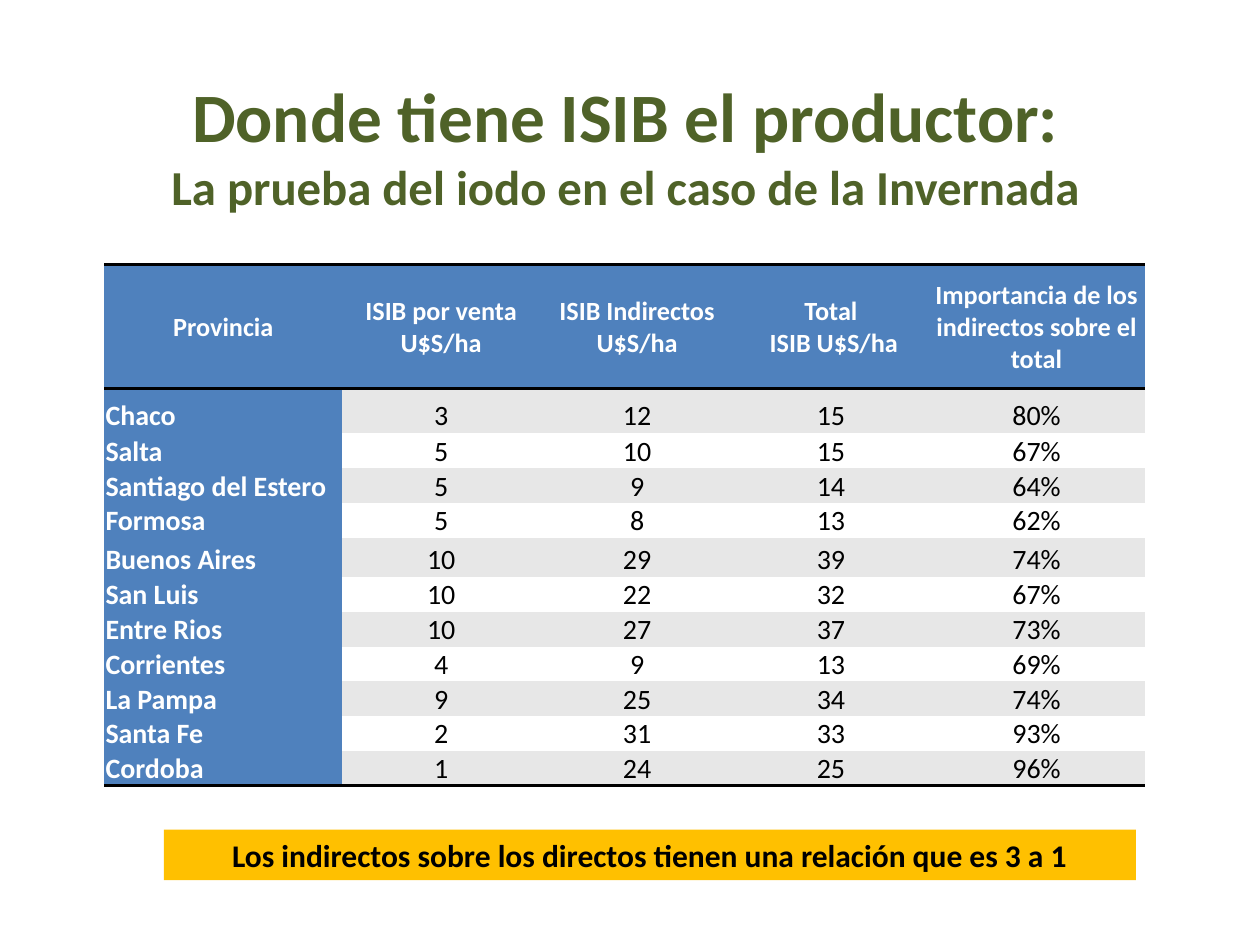
import pptx
import pptx.util
import pptx.dml.color
import pptx.enum.shapes
import pptx.enum.text
import pptx.oxml
import pptx.oxml.ns
from lxml import etree

Pt = pptx.util.Pt
ALIGN = pptx.enum.text.PP_ALIGN
ANCHOR = pptx.enum.text.MSO_ANCHOR

TITLE = "Donde tiene ISIB el productor:\vLa prueba del iodo en el caso de la Invernada"
HEADINGS = (
    "Provincia",
    "ISIB por venta U$S/ha",
    "ISIB Indirectos U$S/ha",
    "Total\n ISIB U$S/ha",
    "Importancia de los indirectos sobre el total",
)
PROVINCES = [
    ("Chaco", 3, 12, 15, "80%"),
    ("Salta", 5, 10, 15, "67%"),
    ("Santiago del Estero", 5, 9, 14, "64%"),
    ("Formosa", 5, 8, 13, "62%"),
    ("Buenos Aires", 10, 29, 39, "74%"),
    ("San Luis", 10, 22, 32, "67%"),
    ("Entre Rios", 10, 27, 37, "73%"),
    ("Corrientes", 4, 9, 13, "69%"),
    ("La Pampa", 9, 25, 34, "74%"),
    ("Santa Fe", 2, 31, 33, "93%"),
    ("Cordoba", 1, 24, 25, "96%"),
]
CONCLUSION = "Los indirectos sobre los directos tienen una relación que es 3 a 1"

THEME = {
    "font": "Calibri",
    "green": "4F6228", "blue": "4F81BD", "grey": "E7E7E7",
    "white": "FFFFFF", "black": "000000", "amber": "FFC000",
    "title": 39.6, "subtitle": 27.9, "heading": 15, "body": 16, "conclusion": 18,
    "rule": 2,
}
COLUMN_WIDTHS = (136, 113, 111, 110.5, 124.5)
HEADING_HEIGHT, ROW_HEIGHT = 71, 18
TALLER_ROWS = {"Chaco": 25.5, "Buenos Aires": 22.3}
NO_STYLE = "{2D5ABB26-0587-4C30-8999-92F81FD0307C}"


def rgb(name):
    """Return a theme colour as an RGBColor."""
    return pptx.dml.color.RGBColor.from_string(THEME[name])


def paint(part, colour):
    """Fill a shape or cell with a solid theme colour."""
    part.fill.solid()
    part.fill.fore_color.rgb = rgb(colour)


def write(frame, text, sizes, colour, bold=True, align=ALIGN.CENTER, anchor=ANCHOR.MIDDLE):
    """Write paragraphs split at newlines, with one size for each line between breaks."""
    frame.word_wrap = True
    frame.vertical_anchor = anchor
    for number, content in enumerate(text.split("\n")):
        paragraph = frame.add_paragraph() if number else frame.paragraphs[0]
        paragraph.alignment = align
        for position, (line, size) in enumerate(zip(content.split("\v"), sizes)):
            if position:
                paragraph.add_line_break()
            run = paragraph.add_run()
            run.text = line
            run.font.name = THEME["font"]
            run.font.size = Pt(THEME[size])
            run.font.bold = bold
            run.font.color.rgb = rgb(colour)


def rule_cell(cell, sides):
    """Draw black rules on the given sides of a cell."""
    properties = cell._tc.get_or_add_tcPr()
    for index, side in enumerate(sides):
        line = etree.Element(pptx.oxml.ns.qn(f"a:ln{side}"), w=str(Pt(THEME["rule"])))
        fill = etree.SubElement(line, pptx.oxml.ns.qn("a:solidFill"))
        etree.SubElement(fill, pptx.oxml.ns.qn("a:srgbClr"), val=THEME["black"])
        properties.insert(index, line)


def add_title(slide):
    """Add the two-line heading."""
    title = slide.shapes.add_textbox(Pt(14.4), Pt(37.4), Pt(686), Pt(90))
    write(title.text_frame, TITLE, ("title", "subtitle"), "green")


def add_tax_table(slide):
    """Add the table of taxes by province."""
    rows = [HEADINGS, *PROVINCES]
    heights = [HEADING_HEIGHT] + [TALLER_ROWS.get(row[0], ROW_HEIGHT) for row in PROVINCES]
    taxes = slide.shapes.add_table(
        len(rows), len(HEADINGS), Pt(59.6), Pt(151.2), Pt(sum(COLUMN_WIDTHS)), Pt(sum(heights))
    ).table
    taxes._tbl.tblPr.find(pptx.oxml.ns.qn("a:tableStyleId")).text = NO_STYLE
    for column, width in zip(taxes.columns, COLUMN_WIDTHS):
        column.width = Pt(width)
    for r, (row, height) in enumerate(zip(rows, heights)):
        taxes.rows[r].height = Pt(height)
        for c, value in enumerate(row):
            cell = taxes.cell(r, c)
            cell.margin_left = cell.margin_right = cell.margin_top = Pt(0.7)
            cell.margin_bottom = 0
            labelled = r == 0 or c == 0
            write(
                cell.text_frame, str(value), ("body" if r else "heading",),
                "white" if labelled else "black", bold=labelled,
                align=ALIGN.LEFT if r and c == 0 else ALIGN.CENTER,
            )
            cell.vertical_anchor = ANCHOR.BOTTOM if r else ANCHOR.MIDDLE
            paint(cell, "blue" if labelled else "grey" if r % 2 else "white")
            if r == 0:
                rule_cell(cell, "TB")
            elif r == len(rows) - 1:
                rule_cell(cell, "B")


def add_conclusion(slide):
    """Add the highlighted conclusion."""
    conclusion = slide.shapes.add_shape(
        pptx.enum.shapes.MSO_SHAPE.RECTANGLE, Pt(93.6), Pt(474), Pt(555.6), Pt(29)
    )
    conclusion.shadow.inherit = False
    paint(conclusion, "amber")
    conclusion.line.fill.background()
    write(conclusion.text_frame, CONCLUSION, ("conclusion",), "black", anchor=ANCHOR.TOP)


def main():
    """Build and save the slide."""
    deck = pptx.Presentation()
    deck.slide_width, deck.slide_height = Pt(720), Pt(540)
    slide = deck.slides.add_slide(deck.slide_layouts[6])
    add_title(slide)
    add_tax_table(slide)
    add_conclusion(slide)
    deck.save("out.pptx")


if __name__ == "__main__":
    main()
